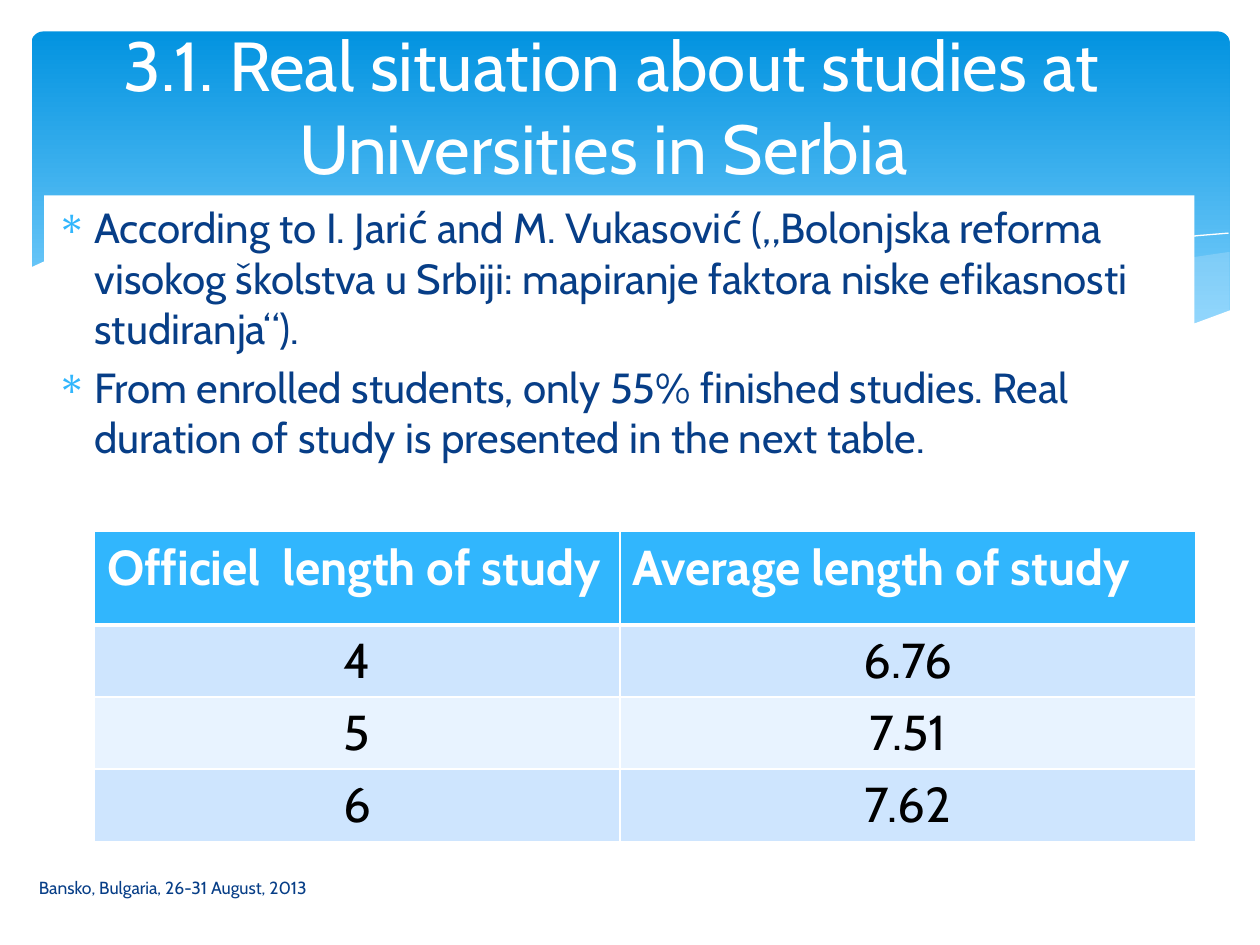
"""Build the slide on the length of university studies in Serbia."""
from lxml import etree
from pptx import Presentation
from pptx import util as u
from pptx.dml.color import RGBColor
from pptx.enum import shapes, text
from pptx.oxml import ns

PX = 9144
FONT = "Cabin"
NAVY, SKY, WHITE, BLACK = "073E87", "31B6FD", "FFFFFF", "000000"
CENTER, LEFT = text.PP_ALIGN.CENTER, text.PP_ALIGN.LEFT

RIBBON = [(314, 0), (287, 4), (245, 13), (200, 23), (144, 37), (92, 48),
          (45, 57), (0, 65), (30, 69), (71, 74), (108, 77), (142, 78),
          (174, 77), (202, 75), (228, 72), (252, 67), (274, 62), (302, 52),
          (315, 47), (315, 0)]
THREAD = [(0, 72), (40, 61), (82, 50), (135, 38), (193, 25), (253, 14),
          (282, 9), (311, 5), (338, 2), (362, 0)]
WAVE = [(954, 62), (927, 72), (897, 81), (864, 87), (827, 91), (786, 93),
        (738, 91), (685, 86), (625, 78), (556, 66), (480, 49), (395, 29),
        (342, 18), (293, 10), (248, 4), (207, 1), (170, 0), (138, 0),
        (109, 2), (83, 5), (62, 9), (44, 13), (29, 17), (13, 23), (0, 29),
        (0, 145), (954, 145)]


def color(value):
    """Turn a hex string into a colour."""
    return RGBColor.from_string(value)


def add_xml(parent, tag, **attributes):
    """Append a DrawingML element to a parent."""
    return etree.SubElement(parent, ns.qn(tag), attributes)


def paint(target, value):
    """Give a shape or cell a solid fill."""
    target.fill.solid()
    target.fill.fore_color.rgb = color(value)


def place(shape, box):
    """Move a shape to a box in px."""
    shape.left, shape.top, shape.width, shape.height = [n * PX for n in box]


def write(paragraph, words, size, fill=NAVY, bold=False, align=LEFT):
    """Write formatted words into a paragraph."""
    paragraph.alignment = align
    run = paragraph.add_run()
    run.text = words
    run.font.name, run.font.size, run.font.bold = FONT, u.Pt(size), bold
    run.font.color.rgb = color(fill)


def add_outline(slide, box, points, closed=True):
    """Draw points relative to the corner of a box."""
    left, top = box
    moved = [(left + x, top + y) for x, y in points]
    builder = slide.shapes.build_freeform(*moved[0], scale=PX)
    builder.add_line_segments(moved[1:], close=closed)
    shape = builder.convert_to_shape()
    shape.shadow.inherit = False
    return shape


def add_backdrop(slide, box):
    """Draw the gradient banner and its waves."""
    left, top, width, height = box
    banner = slide.shapes.add_shape(
        shapes.MSO_SHAPE.ROUNDED_RECTANGLE, *[n * PX for n in box])
    banner.adjustments[0] = 0.034
    banner.shadow.inherit = False
    banner.line.fill.background()
    banner.fill.gradient()
    banner.fill.gradient_angle = 270
    for stop, position, value in zip(
            banner.fill.gradient_stops, (0, 0.9), ("0293E0", "83D3FE")):
        stop.position, stop.color.rgb = position, color(value)

    ribbon = add_outline(slide, (left + 636, top + 175), RIBBON)
    paint(ribbon, "C6E7FC")
    ribbon.line.fill.background()
    tint = next(ribbon.element.spPr.iter(ns.qn("a:srgbClr")))
    add_xml(tint, "a:alpha", val="29000")

    thread = add_outline(slide, (left + 588, top + 160), THREAD, closed=False)
    thread.fill.background()
    thread.line.color.rgb = color(WHITE)
    thread.line.width = 0

    wave = add_outline(slide, (left - 2, top + 159), WAVE)
    paint(wave, WHITE)
    wave.line.fill.background()


def prepare(placeholder, box, anchor):
    """Bring a placeholder to the front and fit it to a box."""
    placeholder.element.getparent().append(placeholder.element)
    place(placeholder, box)
    frame = placeholder.text_frame
    frame.word_wrap = True
    frame.auto_size = text.MSO_AUTO_SIZE.NONE
    frame.vertical_anchor = anchor
    return frame


def fill_title(slide, box, words):
    """Write the slide title."""
    frame = prepare(slide.shapes.title, box, text.MSO_ANCHOR.MIDDLE)
    write(frame.paragraphs[0], words, 39.6, WHITE, align=CENTER)


def fill_body(slide, box, items):
    """Write the bulleted list on a white panel."""
    body = slide.placeholders[1]
    frame = prepare(body, box, text.MSO_ANCHOR.TOP)
    paint(body, WHITE)
    for index, words in enumerate(items):
        paragraph = frame.add_paragraph() if index else frame.paragraphs[0]
        write(paragraph, words, 24)
        paragraph.space_before = u.Pt(4.8)
        properties = paragraph._p.get_or_add_pPr()
        properties.set("marL", str(30 * PX))
        properties.set("indent", str(-30 * PX))
        add_xml(add_xml(properties, "a:buClr"), "a:srgbClr", val=SKY)
        add_xml(properties, "a:buFont", typeface="Symbol")
        add_xml(properties, "a:buChar", char="∗")


def add_borders(cell, bottom):
    """Draw white lines round a cell."""
    properties = cell._tc.get_or_add_tcPr()
    for side, points in (("L", 1), ("R", 1), ("T", 1), ("B", bottom)):
        line = add_xml(properties, f"a:ln{side}", w=str(u.Pt(points)))
        add_xml(add_xml(line, "a:solidFill"), "a:srgbClr", val=WHITE)


def add_lengths(slide, box, rows, widths, heights):
    """Add the table of study lengths."""
    table = slide.shapes.add_table(
        len(rows), len(widths), *[n * PX for n in box]).table
    for column, width in zip(table.columns, widths):
        column.width = width * PX
    for row, height in zip(table.rows, heights):
        row.height = height * PX
    for r, values in enumerate(rows):
        header = r == 0
        fill = SKY if header else ("E8F3FF", "CEE5FE")[r % 2]
        for c, words in enumerate(values):
            cell = table.cell(r, c)
            add_borders(cell, 3 if header else 1)
            paint(cell, fill)
            write(cell.text_frame.paragraphs[0], words, 28,
                  WHITE if header else BLACK, header,
                  LEFT if header else CENTER)


def add_footer(slide, box, words):
    """Write the place and date."""
    frame = slide.shapes.add_textbox(*[n * PX for n in box]).text_frame
    frame.word_wrap = True
    frame.vertical_anchor = text.MSO_ANCHOR.MIDDLE
    write(frame.paragraphs[0], words, 10)


def main():
    """Build and save the presentation."""
    presentation = Presentation()
    presentation.slide_width, presentation.slide_height = 1000 * PX, 750 * PX
    slide = presentation.slides.add_slide(presentation.slide_layouts[1])
    add_backdrop(slide, (25, 25, 951, 270))
    fill_body(slide, (35, 155, 913, 575), [
        "According to I. Jarić and M. Vukasović („Bolonjska reforma visokog "
        "školstva u Srbiji: mapiranje faktora niske efikasnosti studiranja“).",
        "From enrolled students, only 55% finished studies. Real duration of "
        "study is presented in the next table."])
    fill_title(slide, (35, 21, 900, 125),
               "3.1. Real situation about studies at Universities in Serbia ")
    add_lengths(slide, (75, 422, 874, 244), [
        ("Officiel  length of study", "Average length of study"),
        ("4", "6.76"), ("5", "7.51"), ("6", "7.62")],
        (417, 457), (74, 56, 56, 49))
    add_footer(slide, (21, 684, 414, 40),
               "Bansko, Bulgaria, 26-31 August, 2013")
    presentation.save("out.pptx")


if __name__ == "__main__":
    main()
